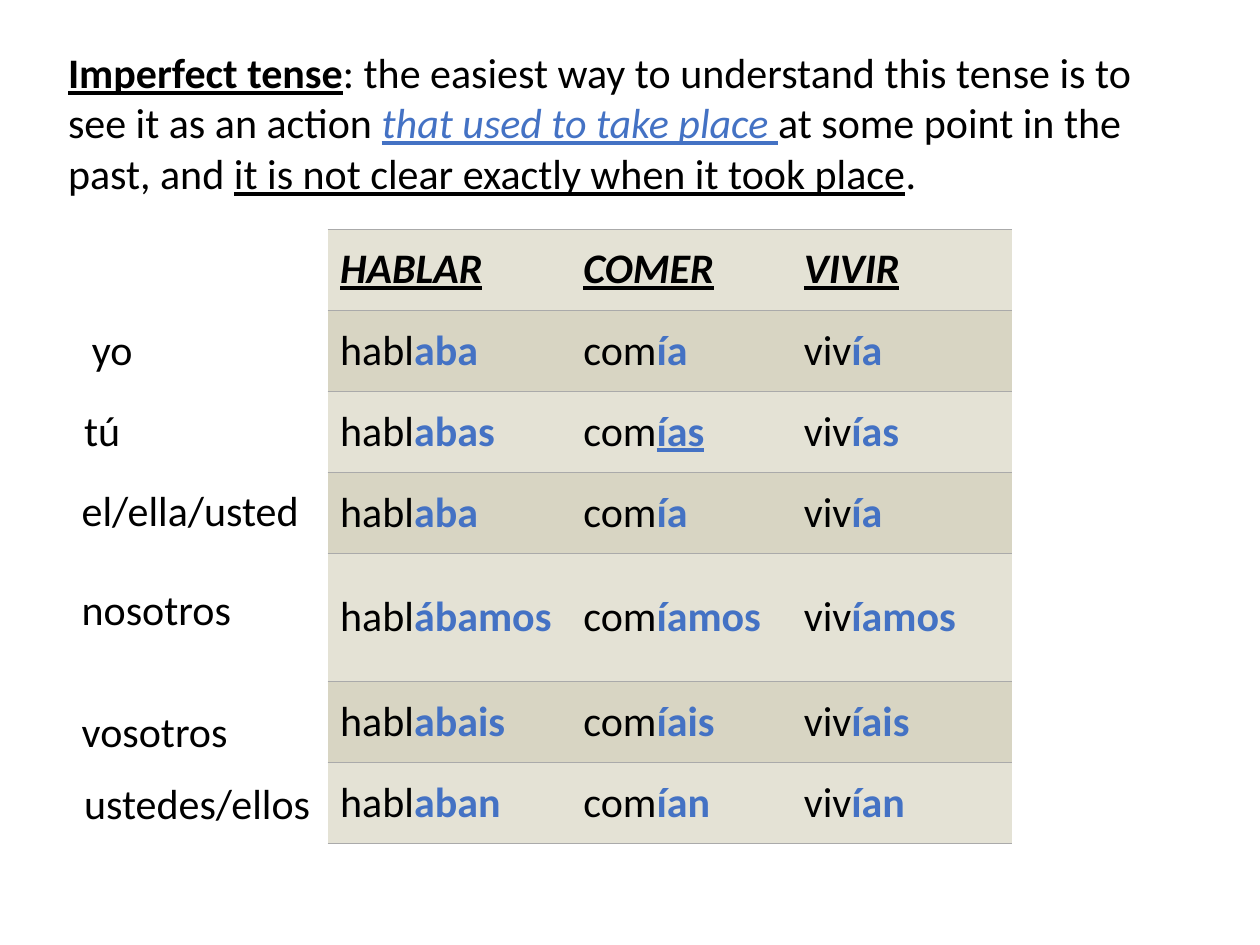
from lxml.etree import SubElement
from pptx import Presentation
from pptx.dml.color import RGBColor
from pptx.enum.text import MSO_ANCHOR as Anchor, MSO_AUTO_SIZE as AutoSize, PP_ALIGN as Align
from pptx.oxml.ns import qn
from pptx.util import Pt

COLORS = {"text": "000000", "ending": "4472C4", "light": "E4E2D5",
          "dark": "D8D5C3", "rule": "AAAAAA"}


def add_run(paragraph, text, color="text", **styles):
    run = paragraph.add_run()
    run.text = text
    run.font.color.rgb = RGBColor.from_string(COLORS[color])
    for attribute, value in {"name": "Calibri", "size": Pt(24), "bold": False, **styles}.items():
        setattr(run.font, attribute, value)


def add_rules(cell):
    properties = cell._tc.get_or_add_tcPr()
    for position, (side, width) in enumerate(
            {"lnL": 0, "lnR": 0, "lnT": 0.75, "lnB": 0.75}.items()):
        line = properties.makeelement(qn(f"a:{side}"), {"w": str(Pt(width))})
        properties.insert(position, line)
        if width:
            fill = SubElement(line, qn("a:solidFill"))
            SubElement(fill, qn("a:srgbClr"), val=COLORS["rule"])
        else:
            SubElement(line, qn("a:noFill"))


deck = Presentation()
deck.slide_width, deck.slide_height = Pt(720), Pt(540)
slide = deck.slides.add_slide(deck.slide_layouts[5])

definition = slide.shapes.title
frame_format = {"word_wrap": True, "auto_size": AutoSize.NONE, "vertical_anchor": Anchor.TOP}
for attribute, value in {"left": 31.7, "top": 23, "width": 660, "height": 94.3}.items():
    setattr(definition, attribute, Pt(value))
for attribute, value in frame_format.items():
    setattr(definition.text_frame, attribute, value)
sentence = definition.text_frame.paragraphs[0]
sentence.alignment = Align.LEFT
for text, color, styles in [
    ("Imperfect tense", "text", {"bold": True, "underline": True}),
    (": the easiest way to understand this tense is to see it as an action ", "text", {}),
    ("that used to take place ", "ending", {"italic": True, "underline": True}),
    ("at some point in the past, and ", "text", {}),
    ("it is not clear exactly when it took place", "text", {"underline": True}),
    (".", "text", {}),
]:
    add_run(sentence, text, color, **styles)

verbs = {"HABLAR": "habl", "COMER": "com", "VIVIR": "viv"}
endings = [
    ("aba", "ía", "ía"),
    ("abas", "ías", "ías"),
    ("aba", "ía", "ía"),
    ("ábamos", "íamos", "íamos"),
    ("abais", "íais", "íais"),
    ("aban", "ían", "ían"),
]
row_heights = [46.3, 46.3, 46.3, 46.3, 73.5, 46.3, 46.3]
column_widths = [139, 126, 126]
conjugation = slide.shapes.add_table(
    len(row_heights), len(verbs), Pt(187.2), Pt(131),
    Pt(sum(column_widths)), Pt(sum(row_heights))).table
for row, height in zip(conjugation.rows, row_heights):
    row.height = Pt(height)
for column, width in zip(conjugation.columns, column_widths):
    column.width = Pt(width)

cell_format = {"vertical_anchor": Anchor.MIDDLE, "margin_left": Pt(7.2), "margin_right": Pt(7.2),
               "margin_top": Pt(7.2), "margin_bottom": Pt(7.2)}
for row in range(len(row_heights)):
    for column, (infinitive, stem) in enumerate(verbs.items()):
        cell = conjugation.cell(row, column)
        for attribute, value in cell_format.items():
            setattr(cell, attribute, value)
        cell.fill.solid()
        cell.fill.fore_color.rgb = RGBColor.from_string(COLORS["dark" if row % 2 else "light"])
        add_rules(cell)
        form = cell.text_frame.paragraphs[0]
        if row == 0:
            add_run(form, infinitive, bold=True, italic=True, underline=True)
        else:
            add_run(form, stem)
            add_run(form, endings[row - 1][column], "ending", bold=True,
                    underline=(row, column) == (2, 1))

for pronoun, left, top, width in [
    ("yo", 45.4, 181.4, 89),
    ("tú", 41, 227.5, 89),
    ("el/ella/usted", 39.6, 273.6, 139),
    ("nosotros", 39.6, 329.8, 117),
    ("vosotros", 39.6, 399.6, 101),
    ("ustedes/ellos", 41, 440.6, 146),
]:
    label = slide.shapes.add_textbox(Pt(left), Pt(top), Pt(width), Pt(36)).text_frame
    label.word_wrap = True
    label.auto_size = AutoSize.SHAPE_TO_FIT_TEXT
    add_run(label.paragraphs[0], pronoun)

deck.save("out.pptx")
